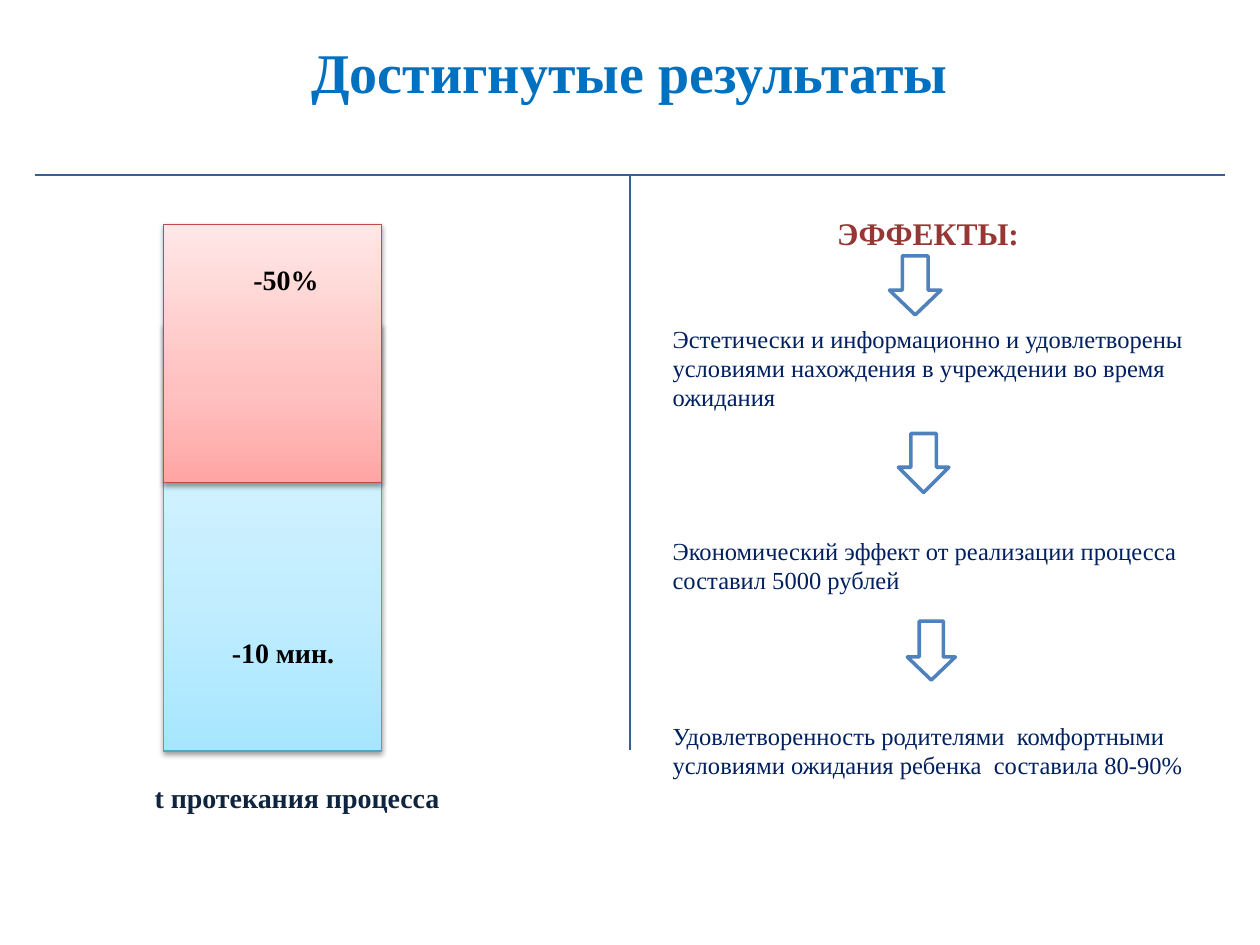
from copy import deepcopy
from dataclasses import dataclass

from lxml.etree import SubElement
from pptx import Presentation
from pptx.dml.color import RGBColor
from pptx.enum.shapes import MSO_CONNECTOR as Connector, MSO_SHAPE as Preset
from pptx.enum.text import MSO_ANCHOR as Anchor, PP_ALIGN as Align
from pptx.oxml.ns import qn
from pptx.util import Cm, Pt


@dataclass
class Box:
    left: float
    top: float
    width: float
    height: float

    def lengths(self) -> list:
        return [Cm(value) for value in (self.left, self.top, self.width, self.height)]


@dataclass
class Line:
    text: str
    size: float
    color: str
    bold: bool = True
    align: Align = Align.CENTER
    before: float = 0


@dataclass
class Label:
    box: Box
    lines: list[Line]
    anchor: Anchor = Anchor.TOP


@dataclass
class Bar:
    box: Box
    stops: dict[float, str]
    border: str


@dataclass
class Arrow:
    box: Box
    head: float


def rgb(value: str) -> RGBColor:
    return RGBColor.from_string(value)


def apply(target, values: dict) -> None:
    for name, value in values.items():
        setattr(target, name, value)


def draw_bar(slide, bar: Bar) -> None:
    shape = slide.shapes.add_shape(Preset.RECTANGLE, *bar.box.lengths())
    shape.line.color.rgb = rgb(bar.border)
    shape.line.width = Pt(0.75)
    shape.fill.gradient()
    shape.fill.gradient_angle = 90
    properties = shape._element.spPr
    stop_list = properties.find(".//" + qn("a:gsLst"))
    stop_list.insert(1, deepcopy(stop_list[0]))
    for stop, (position, color) in zip(shape.fill.gradient_stops, bar.stops.items()):
        stop.position = position
        stop.color.rgb = rgb(color)
    shape.shadow.inherit = False
    effects = properties.find(qn("a:effectLst"))
    shadow = SubElement(effects, qn("a:outerShdw"), blurRad=str(Pt(3.1)),
                        dist=str(Pt(1.6)), dir="5400000", rotWithShape="0")
    shade = SubElement(shadow, qn("a:srgbClr"), val="000000")
    SubElement(shade, qn("a:alpha"), val="38000")


def draw_arrow(slide, arrow: Arrow) -> None:
    shape = slide.shapes.add_shape(Preset.DOWN_ARROW, *arrow.box.lengths())
    shape.adjustments[1] = arrow.head
    shape.fill.solid()
    shape.fill.fore_color.rgb = rgb("FFFFFF")
    shape.line.color.rgb = rgb("4F81BD")
    shape.line.width = Pt(2)
    shape.shadow.inherit = False


def draw_divider(slide, start: tuple[float, float], end: tuple[float, float]) -> None:
    ends = [Cm(value) for value in start + end]
    connector = slide.shapes.add_connector(Connector.STRAIGHT, *ends)
    connector.line.color.rgb = rgb("376092")
    connector.line.width = Pt(1.5)
    SubElement(connector._element.spPr, qn("a:effectLst"))


def draw_label(slide, label: Label) -> None:
    frame = slide.shapes.add_textbox(*label.box.lengths()).text_frame
    apply(frame, {"word_wrap": True, "vertical_anchor": label.anchor})
    for index, line in enumerate(label.lines):
        paragraph = frame.add_paragraph() if index else frame.paragraphs[0]
        apply(paragraph, {"alignment": line.align, "space_before": Pt(line.before)})
        run = paragraph.add_run()
        run.text = line.text
        apply(run.font, {"name": "Times New Roman", "size": Pt(line.size), "bold": line.bold})
        run.font.color.rgb = rgb(line.color)


def effect(text: str, before: float) -> Line:
    return Line(text, 14, "002060", False, Align.LEFT, before)


MIDDLE, RULE_TOP = 12.7, 3.53
BAR_LEFT, BAR_WIDTH = 3.3, 4.39

TIME_BAR = Bar(Box(BAR_LEFT, 6.53, BAR_WIDTH, 8.61),
               {0: "A7E6FF", 0.35: "C1EDFF", 1: "E7F8FF"}, "46AAC5")
SHARE_BAR = Bar(Box(BAR_LEFT, 4.52, BAR_WIDTH, 5.21),
                {0: "FFA6A5", 0.35: "FFC0BF", 1: "FFE7E7"}, "BF4C48")

ARROWS = [
    Arrow(Box(17.93, 5.16, 1.04, 1.19), 0.48),
    Arrow(Box(18.11, 8.74, 1.02, 1.19), 0.5),
    Arrow(Box(18.29, 12.52, 0.97, 1.19), 0.48),
]

LABELS = [
    Label(Box(0.3, 0.53, 24.79, 1.8),
          [Line("Достигнутые результаты", 32, "0070C0")], Anchor.MIDDLE),
    Label(Box(13.31, 4.19, 10.8, 14.5), [
        Line("ЭФФЕКТЫ:", 18, "953735"),
        effect("Эстетически и информационно и удовлетворены условиями "
               "нахождения в учреждении во время ожидания", 41),
        effect("Экономический эффект от реализации процесса составил 5000 рублей", 71),
        effect("Удовлетворенность родителями  комфортными условиями "
               "ожидания ребенка  составила 80-90%", 72),
    ]),
    Label(Box(3.86, 5.16, 3.81, 0.94), [Line("-50%", 16, "000000")]),
    Label(Box(3.71, 9.93, 3.99, 3.68), [Line("-10 мин.", 16, "000000")], Anchor.BOTTOM),
    Label(Box(2.69, 15.62, 6.6, 0.94), [Line("t протекания процесса", 16, "0F243E")]),
]


def main() -> None:
    presentation = Presentation()
    apply(presentation, {"slide_width": Cm(25.4), "slide_height": Cm(19.05)})
    slide = presentation.slides.add_slide(presentation.slide_layouts[6])
    for bar in (TIME_BAR, SHARE_BAR):
        draw_bar(slide, bar)
    draw_divider(slide, (0.71, RULE_TOP), (24.69, RULE_TOP))
    draw_divider(slide, (MIDDLE, RULE_TOP), (MIDDLE, 15.11))
    for arrow in ARROWS:
        draw_arrow(slide, arrow)
    for label in LABELS:
        draw_label(slide, label)
    presentation.save("out.pptx")


if __name__ == "__main__":
    main()
